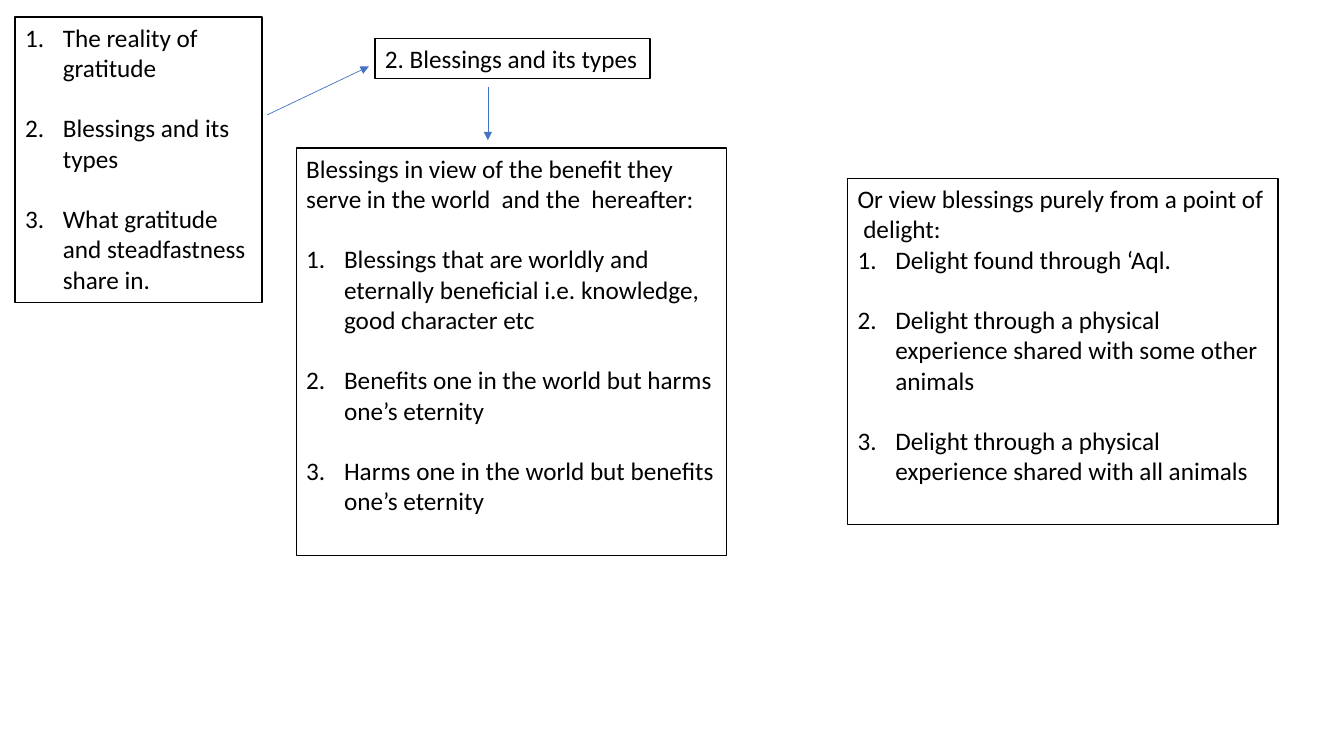
from lxml.etree import SubElement
from pptx import Presentation
from pptx.dml.color import RGBColor
from pptx.enum.shapes import MSO_CONNECTOR as Connector
from pptx.enum.text import MSO_AUTO_SIZE as AutoSize
from pptx.oxml.ns import qn
from pptx.util import Pt

# Content: box position (left, top, width, height), heading, numbered items, gap after heading
BOXES = [
    {"at": (10.8, 12.2, 176.4, 203.8), "heading": None, "gap": False, "items": [
        "The reality of gratitude",
        "Blessings and its types",
        "What gratitude and steadfastness share in."]},
    {"at": (267.8, 27.4, 196.6, 28.8), "heading": "2. Blessings and its types",
     "gap": False, "items": []},
    {"at": (211.7, 105.8, 307.4, 290.9), "gap": True,
     "heading": "Blessings in view of the benefit they serve in the world  and the  hereafter:",
     "items": [
         "Blessings that are worldly and eternally beneficial i.e. knowledge, good character etc",
         "Benefits one in the world but harms one’s eternity",
         "Harms one in the world but benefits one’s eternity"]},
    {"at": (605.5, 127.5, 307.4, 247), "gap": False,
     "heading": "Or view blessings purely from a point of  delight:",
     "items": [
         "Delight found through ‘Aql.",
         "Delight through a physical experience shared with some other animals",
         "Delight through a physical experience shared with all animals"]},
]
ARROWS = [(348.5, 61.9, 348.5, 100.1), (190.8, 82.1, 263.5, 47.5)]

FONT, SIZE, LINE_GAP, INDENT = "Calibri", 18, 21.6, 27
BLACK, WHITE, BLUE = "000000", "FFFFFF", "4472C4"


def color(value):
    return RGBColor.from_string(value)


def number(paragraph):
    properties = paragraph._p.get_or_add_pPr()
    properties.set("marL", str(Pt(INDENT)))
    properties.set("indent", str(-Pt(INDENT)))
    SubElement(properties, qn("a:buFont"), typeface="+mj-lt")
    SubElement(properties, qn("a:buAutoNum"), type="arabicPeriod")


def add_box(slide, at, heading, gap, items):
    shape = slide.shapes.add_textbox(*map(Pt, at))
    shape.fill.solid()
    shape.fill.fore_color.rgb = color(WHITE)
    shape.line.color.rgb = color(BLACK)
    shape.line.width = Pt(1)
    frame = shape.text_frame
    frame.auto_size = AutoSize.NONE
    frame.word_wrap = bool(items)
    lines = ([heading] if heading else []) + items
    frame.text = "\n".join(lines)
    first_item = len(lines) - len(items)
    for index, paragraph in enumerate(frame.paragraphs):
        paragraph.font.name = FONT
        paragraph.font.size = Pt(SIZE)
        paragraph.font.color.rgb = color(BLACK)
        # One line of space between items, and after the heading where asked
        if index > first_item or (gap and index == first_item):
            paragraph.space_before = Pt(LINE_GAP)
        if index >= first_item:
            number(paragraph)


def add_arrow(slide, ends):
    arrow = slide.shapes.add_connector(Connector.STRAIGHT, *map(Pt, ends))
    arrow.line.color.rgb = color(BLUE)
    arrow.line.width = Pt(0.5)
    SubElement(arrow.line._get_or_add_ln(), qn("a:tailEnd"), type="triangle")
    SubElement(arrow._element.spPr, qn("a:effectLst"))


def main():
    presentation = Presentation()
    presentation.slide_width, presentation.slide_height = Pt(960), Pt(540)
    slide = presentation.slides.add_slide(presentation.slide_layouts[6])
    for box in BOXES:
        add_box(slide, **box)
    for ends in ARROWS:
        add_arrow(slide, ends)
    presentation.save("out.pptx")


if __name__ == "__main__":
    main()
